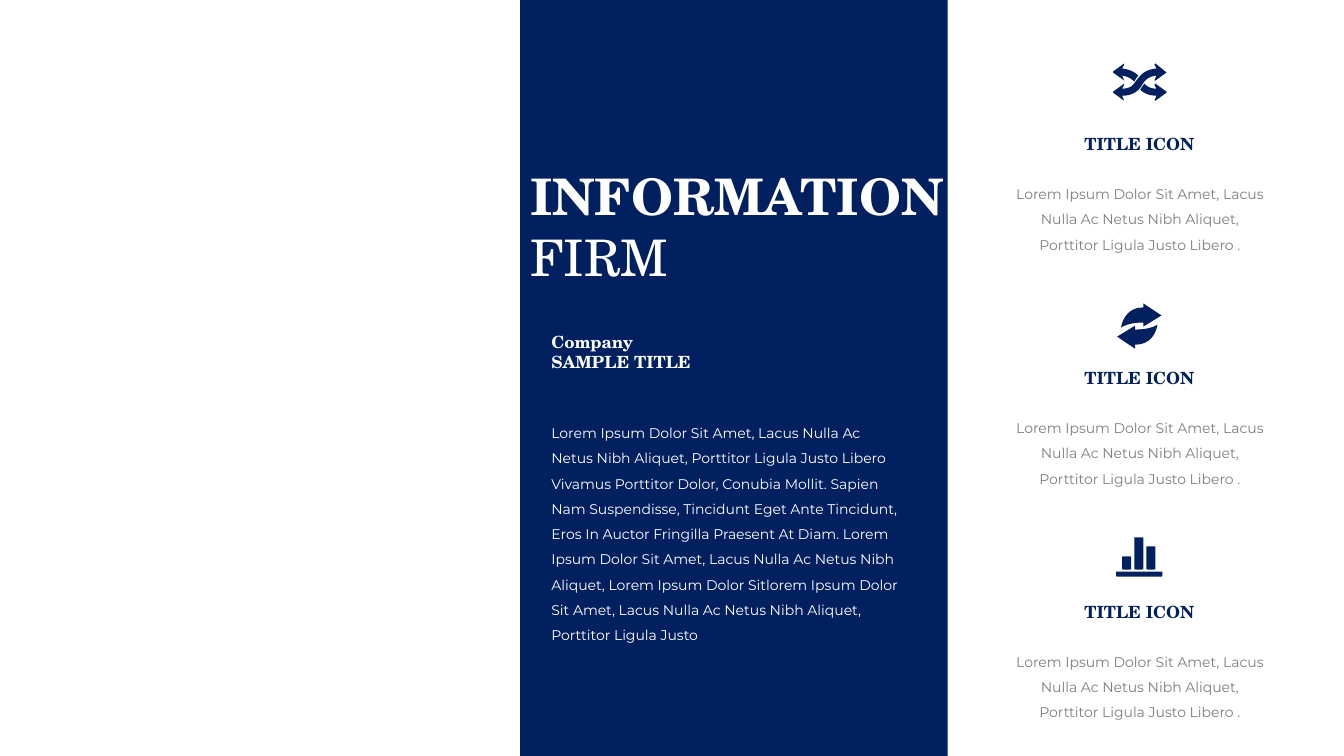
from dataclasses import dataclass

from pptx import Presentation
from pptx.dml.color import RGBColor
from pptx.enum.shapes import MSO_SHAPE
from pptx.enum.text import MSO_ANCHOR, MSO_AUTO_SIZE, PP_ALIGN
from pptx.util import Inches, Pt


@dataclass(frozen=True)
class Theme:
    navy: RGBColor = RGBColor(0x00, 0x20, 0x60)
    white: RGBColor = RGBColor(0xFF, 0xFF, 0xFF)
    gray: RGBColor = RGBColor(0x7F, 0x7F, 0x7F)
    serif: str = "TeX Gyre Schola"
    sans: str = "Montserrat"
    title_size: int = 36
    heading_size: int = 12
    body_size: int = 10


def curve_points(start, curve, steps=10):
    controls = [start, curve[:2], curve[2:4], curve[4:]]
    points = []
    for step in range(1, steps + 1):
        t = step / steps
        weights = [(1 - t) ** 3, 3 * t * (1 - t) ** 2, 3 * t**2 * (1 - t), t**3]
        points.append(tuple(
            sum(weight * control[axis] for weight, control in zip(weights, controls))
            for axis in (0, 1)
        ))
    return points


def outline(segments):
    points = [segments[0]]
    for segment in segments[1:]:
        points += [segment] if len(segment) == 2 else curve_points(points[-1], segment)
    return points


def rounded_bar(left, top, right, bottom, radius):
    return outline([
        (left + radius, top),
        (right - radius, top),
        (right, top, right, top, right, top + radius),
        (right, bottom - radius),
        (right, bottom, right, bottom, right - radius, bottom),
        (left + radius, bottom),
        (left, bottom, left, bottom, left, bottom - radius),
        (left, top + radius),
        (left, top, left, top, left + radius, top),
    ])


def shuffle_icon():
    crossing = [
        (0.29, 0.21), (0.32, 0.16, 0.35, 0.13, 0.43, 0.12), (0.41, 0.17),
        (0.42, 0.17), (0.53, 0.09), (0.42, 0), (0.41, 0.01), (0.43, 0.05),
        (0.31, 0.06, 0.27, 0.12, 0.23, 0.17), (0.2, 0.21, 0.18, 0.25, 0.09, 0.25),
        (0.11, 0.21), (0.11, 0.2), (0, 0.28), (0, 0.29), (0.11, 0.37),
        (0.09, 0.32), (0.21, 0.32, 0.26, 0.26, 0.29, 0.21),
    ]
    upper_left = [
        (0.11, 0.17), (0.09, 0.12), (0.15, 0.13, 0.18, 0.15, 0.21, 0.18),
        (0.22, 0.16, 0.24, 0.13, 0.25, 0.12), (0.22, 0.09, 0.17, 0.06, 0.09, 0.05),
        (0.11, 0.01), (0.11, 0), (0, 0.08), (0, 0.09),
    ]
    lower_right = [
        (0.53, 0.28), (0.53, 0.29), (0.42, 0.37), (0.41, 0.37), (0.43, 0.32),
        (0.35, 0.32, 0.3, 0.29, 0.27, 0.26), (0.28, 0.24, 0.29, 0.23, 0.31, 0.2),
        (0.34, 0.23, 0.37, 0.25, 0.43, 0.25), (0.41, 0.21), (0.42, 0.2),
    ]
    return [outline(part) for part in (crossing, upper_left, lower_right)]


def cycle_icon():
    arrow = outline([
        (0.18, 0.45), (0.18, 0.41), (0.38, 0.41, 0.4, 0.21, 0.4, 0.21),
        (0.4, 0.21, 0.34, 0.26, 0.18, 0.26), (0.18, 0.22), (0, 0.33),
    ])
    return [arrow, [(0.44 - x, 0.45 - y) for x, y in arrow]]


def chart_icon():
    bars = [
        rounded_bar(0.06 + 0.12 * index, top, 0.15 + 0.12 * index, 0.32, 0.02)
        for index, top in enumerate((0.19, 0, 0.09))
    ]
    return bars + [rounded_bar(0, 0.34, 0.46, 0.39, 0.02)]


class SlideBuilder:
    def __init__(self, slide, theme):
        self.slide = slide
        self.theme = theme

    def paint(self, shape, color):
        shape.shadow.inherit = False
        shape.fill.solid()
        shape.fill.fore_color.rgb = color
        shape.line.fill.background()

    def format_run(self, run, font, size, color, bold):
        run.font.name = font
        run.font.size = Pt(size)
        run.font.color.rgb = color
        run.font.bold = bold

    def fit_frame(self, text_frame):
        text_frame.word_wrap = True
        text_frame.auto_size = MSO_AUTO_SIZE.SHAPE_TO_FIT_TEXT
        text_frame.vertical_anchor = MSO_ANCHOR.TOP

    def title(self, box, strong, light):
        title = self.slide.shapes.title
        title.left, title.top, title.width, title.height = map(Inches, box)
        self.fit_frame(title.text_frame)
        paragraph = title.text_frame.paragraphs[0]
        paragraph.alignment = PP_ALIGN.LEFT
        for text, bold in ((strong, True), (light, False)):
            run = paragraph.add_run()
            run.text = text
            self.format_run(run, self.theme.serif, self.theme.title_size, self.theme.white, bold)

    def panel(self, box):
        panel = self.slide.shapes.add_shape(MSO_SHAPE.RECTANGLE, *map(Inches, box))
        self.paint(panel, self.theme.navy)
        self.slide.shapes.title.element.addprevious(panel.element)

    def text(self, box, text, font, size, color, bold=False, align=PP_ALIGN.LEFT, spacing=1.0):
        text_frame = self.slide.shapes.add_textbox(*map(Inches, box)).text_frame
        self.fit_frame(text_frame)
        text_frame.text = text
        paragraph = text_frame.paragraphs[0]
        paragraph.alignment = align
        paragraph.line_spacing = spacing
        self.format_run(paragraph.runs[0], font, size, color, bold)

    def heading(self, box, text, color, align=PP_ALIGN.LEFT):
        self.text(box, text, self.theme.serif, self.theme.heading_size, color, True, align)

    def body(self, box, text, color, align=PP_ALIGN.LEFT):
        self.text(box, text, self.theme.sans, self.theme.body_size, color, False, align, 1.5)

    def icon(self, left, top, contours):
        placed = [[(Inches(left + x), Inches(top + y)) for x, y in contour] for contour in contours]
        builder = self.slide.shapes.build_freeform(*placed[0][0])
        for index, contour in enumerate(placed):
            if index:
                builder.move_to(*contour[0])
            builder.add_line_segments(contour[1:], close=True)
        self.paint(builder.convert_to_shape(), self.theme.navy)


def main():
    presentation = Presentation()
    presentation.slide_width = Inches(13.33)
    presentation.slide_height = Inches(7.5)
    theme = Theme()
    builder = SlideBuilder(presentation.slides.add_slide(presentation.slide_layouts[5]), theme)

    builder.panel((5.16, 0, 4.24, 7.5))
    builder.title((5.16, 1.59, 4.34, 1.31), "INFORMATION ", "FIRM")
    builder.heading((5.37, 3.24, 1.62, 0.5), "Company SAMPLE TITLE", theme.white)
    builder.body(
        (5.37, 4.08, 3.68, 2.37),
        "Lorem Ipsum Dolor Sit Amet, Lacus Nulla Ac Netus Nibh Aliquet, Porttitor Ligula Justo "
        "Libero Vivamus Porttitor Dolor, Conubia Mollit. Sapien Nam Suspendisse, Tincidunt Eget "
        "Ante Tincidunt, Eros In Auctor Fringilla Praesent At Diam. Lorem Ipsum Dolor Sit Amet, "
        "Lacus Nulla Ac Netus Nibh Aliquet, Lorem Ipsum Dolor Sitlorem Ipsum Dolor Sit Amet, "
        "Lacus Nulla Ac Netus Nibh Aliquet, Porttitor Ligula Justo",
        theme.white,
    )

    icons = [(11.04, 0.63, shuffle_icon()), (11.08, 3.01, cycle_icon()), (11.07, 5.33, chart_icon())]
    for row, (left, top, contours) in enumerate(icons):
        heading_top = 1.28 + 2.32 * row
        builder.icon(left, top, contours)
        builder.heading((10.51, heading_top, 1.58, 0.3), "TITLE ICON", theme.navy, PP_ALIGN.CENTER)
        builder.body(
            (9.94, heading_top + 0.43, 2.73, 0.86),
            "Lorem Ipsum Dolor Sit Amet, Lacus Nulla Ac Netus Nibh Aliquet, "
            "Porttitor Ligula Justo Libero .",
            theme.gray,
            PP_ALIGN.CENTER,
        )

    presentation.save("out.pptx")


if __name__ == "__main__":
    main()
